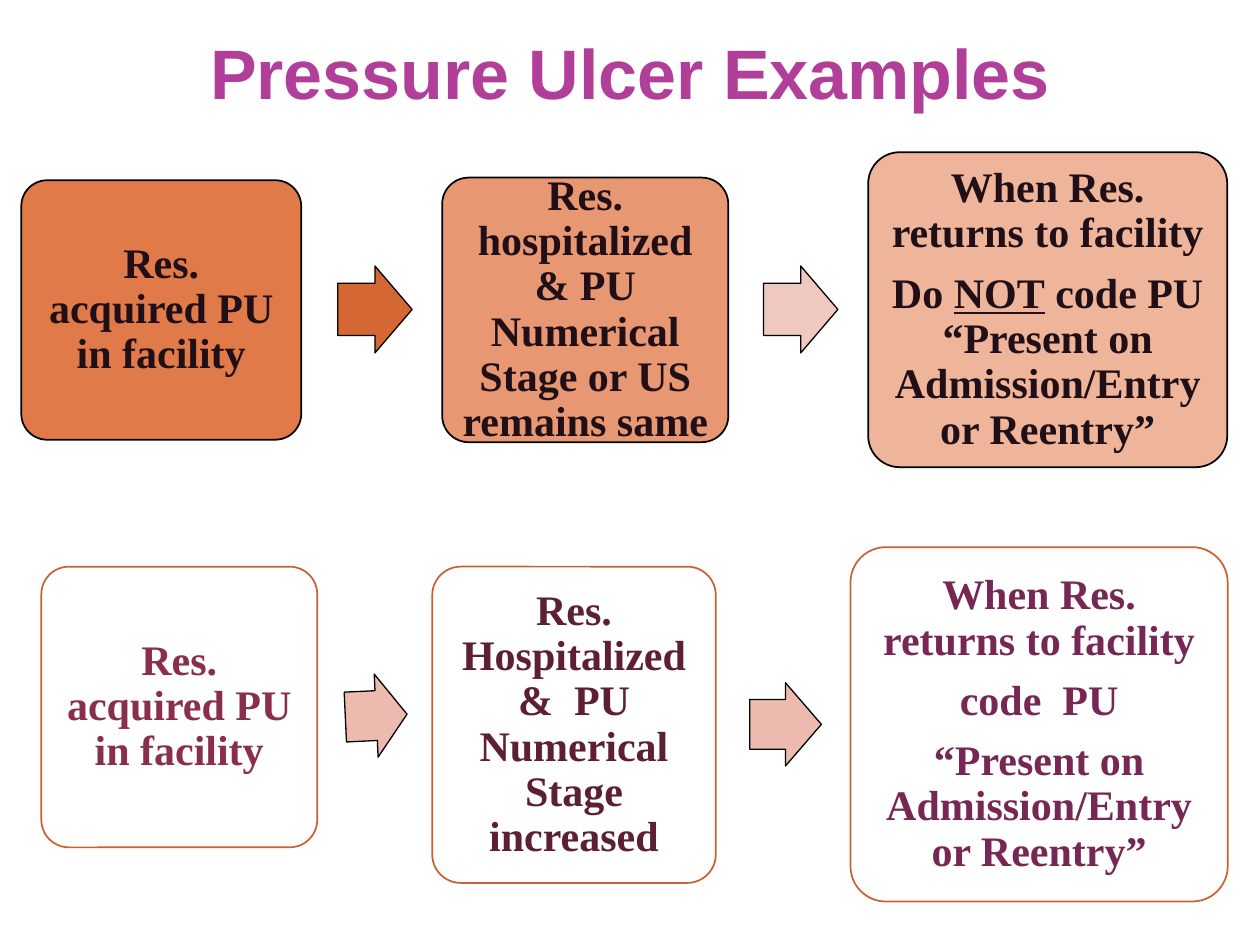
from lxml import etree
from pptx import Presentation
from pptx.dml.color import RGBColor
from pptx.enum.shapes import MSO_SHAPE
from pptx.enum.text import MSO_ANCHOR, PP_ALIGN
from pptx.oxml.ns import qn
from pptx.util import Pt

BOX, ARROW = MSO_SHAPE.ROUNDED_RECTANGLE, MSO_SHAPE.RIGHT_ARROW
MID, LOW = MSO_ANCHOR.MIDDLE, MSO_ANCHOR.BOTTOM
CENTER = PP_ALIGN.CENTER
RUST, DARK, EDGE = "DE6C36", "210F17", "C96231"


def color(code):
    return RGBColor.from_string(code)


def draw(kind, place, adjust, fill, line, width):
    shape = slide.shapes.add_shape(kind, *[Pt(v) for v in place])
    shape.shadow.inherit = False
    for i, value in enumerate(adjust):
        shape.adjustments[i] = value
    shape.fill.solid()
    shape.fill.fore_color.rgb = color(fill)
    shape.line.color.rgb = color(line)
    shape.line.width = Pt(width)
    return shape


deck = Presentation()
deck.slide_width, deck.slide_height = Pt(720), Pt(540)
slide = deck.slides.add_slide(deck.slide_layouts[5])

# Title
title = slide.shapes.title
title.left, title.top, title.width, title.height = Pt(0), Pt(12.24), Pt(720), Pt(59.76)
frame = title.text_frame
frame.text = "Pressure Ulcer Examples"
form = {"vertical_anchor": LOW, "word_wrap": True, "margin_left": Pt(7.2),
        "margin_right": Pt(7.2), "margin_top": Pt(3.6), "margin_bottom": Pt(7.2)}
for key, value in form.items():
    setattr(frame, key, value)
para = frame.paragraphs[0]
para.alignment = CENTER
font = para.runs[0].font
for key, value in {"name": "Arial", "size": Pt(40), "bold": True}.items():
    setattr(font, key, value)
font.color.rgb = color("B13F9A")

# Steps: place, fill, opacity in percent, line, text colour, paragraphs of runs
back = "When Res. returns to facility"
steps = [
    ((12.2, 103, 160, 148.3), RUST, 90, "000000", DARK,
     [["Res. acquired PU in facility"]]),
    ((252.7, 101.5, 163.5, 151.2), RUST, 70, "000000", DARK,
     [["Res. hospitalized & PU Numerical Stage or US remains same"]]),
    ((496.1, 87, 205.2, 180), RUST, 50, "000000", DARK,
     [[back], ["Do ", "NOT", " code PU “Present on Admission/Entry or Reentry”"]]),
    ((23.6, 323.8, 157.7, 160.4), "FFFFFF", 100, EDGE, "8A2E4E",
     [["Res. acquired PU in facility"]]),
    ((247, 323.8, 162, 180.7), "FFFFFF", 100, EDGE, "5C1F34",
     [["Res. Hospitalized &  PU Numerical Stage increased"]]),
    ((486, 312.7, 215.6, 202.5), "FFFFFF", 100, EDGE, "772754",
     [[back], ["code  PU"], ["“Present on Admission/Entry or Reentry”"]]),
]
inset = dict.fromkeys(["margin_left", "margin_right", "margin_top", "margin_bottom"], Pt(7.2))
body = {"word_wrap": True, "vertical_anchor": MID, **inset}
lines = {"alignment": CENTER, "line_spacing": 0.9, "space_after": Pt(8.4)}
face = {"name": "Times New Roman", "size": Pt(24), "bold": True}
for place, fill, solid, line, ink, paras in steps:
    box = draw(BOX, place, [0.1], fill, line, 1)
    if solid < 100:
        tint = box.fill._xPr.find(".//" + qn("a:srgbClr"))
        etree.SubElement(tint, qn("a:alpha")).set("val", str(solid * 1000))
    frame = box.text_frame
    for key, value in body.items():
        setattr(frame, key, value)
    for i, texts in enumerate(paras):
        para = frame.add_paragraph() if i else frame.paragraphs[0]
        for key, value in lines.items():
            setattr(para, key, value)
        for text in texts:
            run = para.add_run()
            run.text = text
            for key, value in face.items():
                setattr(run.font, key, value)
            run.font.color.rgb = color(ink)
            if text == "NOT":
                run.font.underline = True

# Arrows between steps: place, fill, turn
arrows = [
    ((193, 152, 42.5, 49.7), "D46734", 0),
    ((436.3, 152, 42.5, 49.7), "EFC8BF", 0),
    ((197.3, 385.2, 35.3, 47.5), "ECBAAE", 357.3),
    ((428.4, 390.2, 41, 47.5), "ECBAAE", 0),
]
for place, fill, turn in arrows:
    arrow = draw(ARROW, place, [0.6, 0.5], fill, "000000", 0.75)
    arrow.rotation = turn

deck.save("out.pptx")
